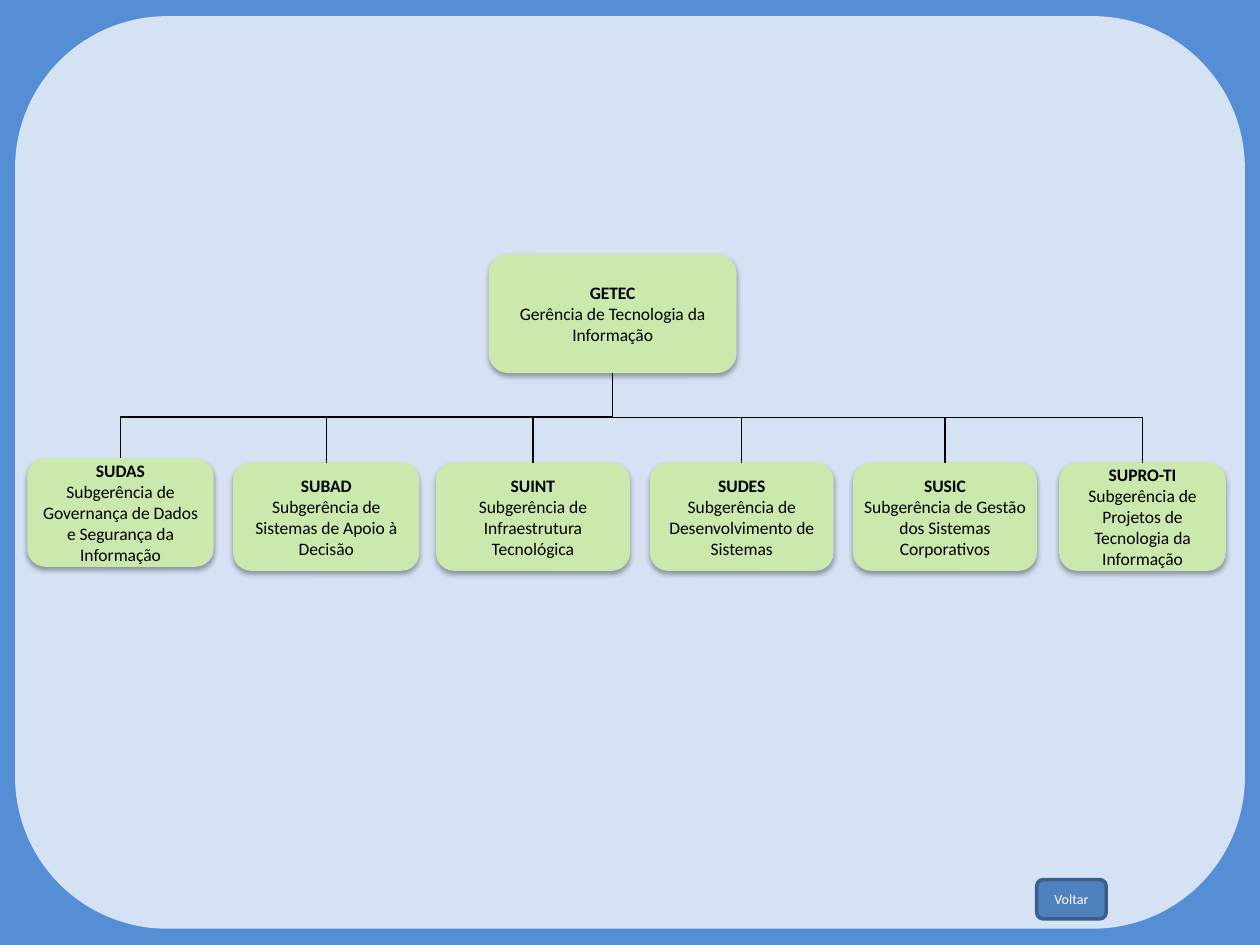
from dataclasses import dataclass

from lxml import etree
from pptx import Presentation
from pptx.dml.color import RGBColor
from pptx.enum.shapes import MSO_CONNECTOR, MSO_SHAPE
from pptx.enum.text import MSO_ANCHOR, PP_ALIGN
from pptx.oxml.ns import qn
from pptx.util import Pt

ROUNDED = MSO_SHAPE.ROUNDED_RECTANGLE
ELBOW = MSO_CONNECTOR.ELBOW
CENTER = PP_ALIGN.CENTER
MIDDLE = MSO_ANCHOR.MIDDLE
TOP_SITE, BOTTOM_SITE = 0, 2
BLANK_LAYOUT = 6


@dataclass(frozen=True)
class Theme:
    font: str = "Calibri"
    background: str = "558ED5"
    panel: str = "D4E2F4"
    box: str = "CCE9AD"
    button: str = "4F81BD"
    button_line: str = "3A5F8C"
    dark: str = "000000"
    light: str = "FFFFFF"
    box_size: float = 10
    button_size: float = 8


THEME = Theme()

ROW_TOP, ROW_HEIGHT = 264.3, 61.9
# Acronym, name, left, width, top
UNITS = [
    ("SUDAS", "Subgerência de Governança de Dados e Segurança da Informação", 15.6, 106.5, 262),
    ("SUBAD", "Subgerência de Sistemas de Apoio à Decisão", 133.2, 106.5, ROW_TOP),
    ("SUINT", "Subgerência de Infraestrutura Tecnológica", 249.1, 110.9, ROW_TOP),
    ("SUDES", "Subgerência de Desenvolvimento de Sistemas", 371.4, 105, ROW_TOP),
    ("SUSIC", "Subgerência de Gestão dos Sistemas Corporativos", 487.5, 105, ROW_TOP),
    ("SUPRO-TI", "Subgerência de Projetos de Tecnologia da Informação", 605.3, 95.2, ROW_TOP),
]


def color(value):
    return RGBColor.from_string(value)


def add_rounded(slide, left, top, width, height, fill, line=None, line_width=2):
    shape = slide.shapes.add_shape(ROUNDED, Pt(left), Pt(top), Pt(width), Pt(height))
    shape.shadow.inherit = False
    shape.fill.solid()
    shape.fill.fore_color.rgb = color(fill)
    if line:
        shape.line.color.rgb = color(line)
        shape.line.width = Pt(line_width)
    else:
        shape.line.fill.background()
    return shape


def add_shadow(shape):
    effects = shape._element.spPr.find(qn("a:effectLst"))
    shadow = etree.SubElement(effects, qn("a:outerShdw"), blurRad=str(Pt(3.1)),
                              dist=str(Pt(1.8)), dir="5400000", rotWithShape="0")
    shade = etree.SubElement(shadow, qn("a:srgbClr"), val=THEME.dark)
    etree.SubElement(shade, qn("a:alpha"), val="35000")


def write_text(paragraph, text, *, size, text_color, bold=False):
    paragraph.alignment = CENTER
    run = paragraph.add_run()
    run.text = text
    run.font.name = THEME.font
    run.font.size = Pt(size)
    run.font.bold = bold
    run.font.color.rgb = color(text_color)


def add_unit(slide, acronym, name, left, top, width, height, inset=None):
    shape = add_rounded(slide, left, top, width, height, THEME.box)
    add_shadow(shape)
    frame = shape.text_frame
    frame.word_wrap = True
    frame.vertical_anchor = MIDDLE
    if inset is not None:
        frame.margin_left = frame.margin_right = Pt(inset)
        frame.margin_top = frame.margin_bottom = Pt(inset)
    style = {"size": THEME.box_size, "text_color": THEME.dark}
    write_text(frame.paragraphs[0], acronym, bold=True, **style)
    write_text(frame.add_paragraph(), name, **style)
    return shape


def add_branch(slide, parent, child, bend=0.5):
    """Elbow that leaves the parent downwards and enters the child from above."""
    x1, y1 = parent.left + parent.width // 2, parent.top + parent.height
    x2, y2 = child.left + child.width // 2, child.top
    connector = slide.shapes.add_connector(ELBOW, x1, y1, x2, y2)
    connector.begin_connect(parent, BOTTOM_SITE)
    connector.end_connect(child, TOP_SITE)
    connector.line.color.rgb = color(THEME.dark)
    connector.line.width = Pt(0.75)
    properties = connector._element.spPr
    etree.SubElement(properties, qn("a:effectLst"))

    # A vertical elbow is a horizontal one turned by a quarter
    drop, span = y2 - y1, abs(x2 - x1)
    connector.width, connector.height = drop, span
    connector.left = (x1 + x2 - drop) // 2
    connector.top = (y1 + y2 - span) // 2
    to_right = x2 > x1
    transform = properties.find(qn("a:xfrm"))
    transform.set("rot", "16200000" if to_right else "5400000")
    transform.set("flipH", "1" if to_right else "0")

    geometry = properties.find(qn("a:prstGeom"))
    adjustments = geometry.find(qn("a:avLst"))
    if adjustments is None:
        adjustments = etree.SubElement(geometry, qn("a:avLst"))
    etree.SubElement(adjustments, qn("a:gd"), name="adj1", fmla=f"val {round(bend * 100000)}")


def add_button(slide, text, left, top, width, height):
    button = add_rounded(slide, left, top, width, height, THEME.button, THEME.button_line)
    button.text_frame.vertical_anchor = MIDDLE
    write_text(button.text_frame.paragraphs[0], text,
               size=THEME.button_size, text_color=THEME.light)


def main():
    presentation = Presentation()
    presentation.slide_width, presentation.slide_height = Pt(720), Pt(540)
    slide = presentation.slides.add_slide(presentation.slide_layouts[BLANK_LAYOUT])

    # Background and panel
    slide.background.fill.solid()
    slide.background.fill.fore_color.rgb = color(THEME.background)
    add_rounded(slide, 8.6, 9.2, 702.8, 521.5, THEME.panel)

    # Department and its units
    department = add_unit(slide, "GETEC", "Gerência de Tecnologia da Informação",
                          279.2, 145.2, 141.8, 68)
    for acronym, name, left, width, top in UNITS:
        unit = add_unit(slide, acronym, name, left, top, width, ROW_HEIGHT, inset=2.88)
        add_branch(slide, department, unit, bend=0.5 if top == ROW_TOP else 0.515)

    # Back button
    add_button(slide, "Voltar", 592.4, 502.6, 39.7, 22.5)

    presentation.save("out.pptx")


if __name__ == "__main__":
    main()
